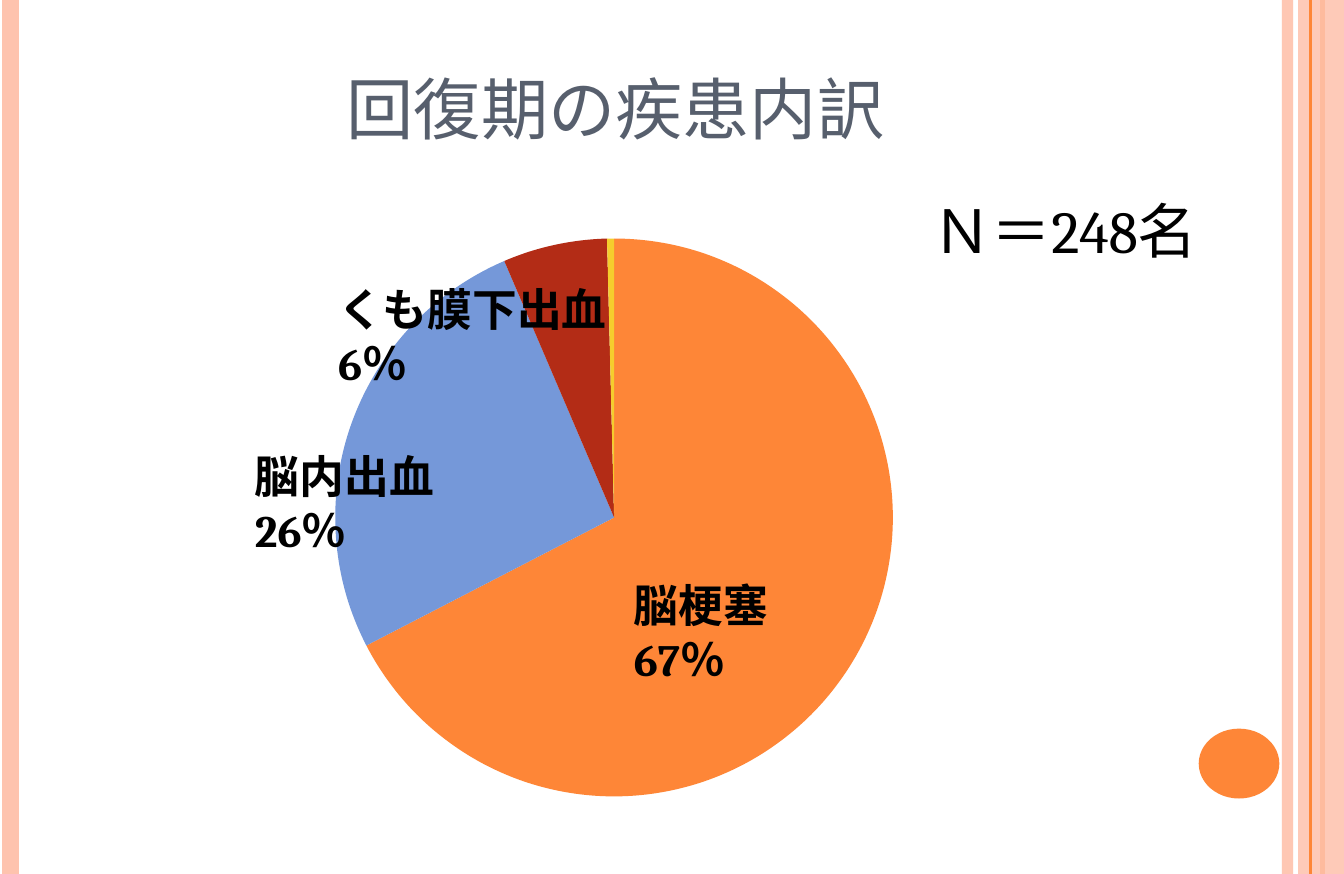
"""Build the slide on the disease breakdown of recovery-phase patients."""
from lxml.etree import SubElement
from pptx import Presentation
from pptx.chart.data import CategoryChartData
from pptx.dml.color import RGBColor
from pptx.enum.chart import XL_CHART_TYPE as CHART
from pptx.enum.shapes import MSO_CONNECTOR as LINE, MSO_SHAPE as SHAPE
from pptx.enum.text import MSO_ANCHOR as ANCHOR, PP_ALIGN as ALIGN
from pptx.oxml.ns import qn
from pptx.util import Inches, Pt

ORANGE, PEACH, BLACK = "FE8637", "FEC3AE", "000000"
FONT = "Cambria"

deck = Presentation()
deck.slide_width, deck.slide_height = Inches(5), Inches(3.25)
COL, ROW = deck.slide_width / 100, deck.slide_height / 65


def grid(left, top, width, height):
    return [int(n * unit) for n, unit in zip((left, top, width, height), (COL, ROW) * 2)]


def paint(colour_format, hex_colour, opacity=100):
    colour_format.rgb = RGBColor.from_string(hex_colour)
    if opacity < 100:
        parent = colour_format._xFill if hasattr(colour_format, "_xFill") else None
        if parent is not None:
            SubElement(parent.find(qn("a:srgbClr")), qn("a:alpha"), val=str(opacity * 1000))


slide = deck.slides.add_slide(deck.slide_layouts[5])

stripes = [(95.8, PEACH, 3, 93), (0.8, PEACH, 4.5, 100), (98.4, ORANGE, 1.5, 100),
           (97.5, ORANGE, 0.75, 100)]
bands = [(SHAPE.RECTANGLE, (96.6, 0, 3.4, 65), PEACH, 87),
         (SHAPE.OVAL, (89.2, 54.2, 6, 5.2), ORANGE, 100)]

for column, hue, weight, opacity in stripes[:3]:
    x = int(column * COL)
    stripe = slide.shapes.add_connector(LINE.STRAIGHT, x, 0, x, deck.slide_height)
    stripe.line.width = Pt(weight)
    stripe.line.fill.solid()
    paint(stripe.line.fill.fore_color, hue, opacity)
    SubElement(stripe._element.spPr, qn("a:effectLst"))

for kind, area, hue, opacity in bands:
    band = slide.shapes.add_shape(kind, *grid(*area))
    band.shadow.inherit = False
    band.fill.solid()
    paint(band.fill.fore_color, hue, opacity)
    band.line.fill.background()

for column, hue, weight, opacity in stripes[3:]:
    x = int(column * COL)
    stripe = slide.shapes.add_connector(LINE.STRAIGHT, x, 0, x, deck.slide_height)
    stripe.line.width = Pt(weight)
    paint(stripe.line.color, hue)
    SubElement(stripe._element.spPr, qn("a:effectLst"))

heading = slide.shapes.title
heading.left, heading.top, heading.width, heading.height = grid(5, 2.6, 81.6, 10.8)
frame = heading.text_frame
frame.text = "回復期の疾患内訳"
margins = {"margin_left": Inches(0.05), "margin_right": Inches(0.05),
           "margin_top": Inches(0.02), "margin_bottom": Inches(0.02),
           "vertical_anchor": ANCHOR.MIDDLE}
for name, value in margins.items():
    setattr(frame, name, value)
frame.paragraphs[0].alignment = ALIGN.CENTER
wording = frame.paragraphs[0].runs[0].font
wording.name, wording.size = FONT, Pt(18)
paint(wording.color, "575F6D")

diseases = CategoryChartData()
diseases.categories = ["1", "2", "3", "4"]
diseases.add_series("Series 1", (67, 26, 6, 0.4))
pie = slide.shapes.add_chart(CHART.PIE, *grid(4.2, 14.8, 83, 47.4), diseases).chart
pie.has_legend = pie.has_title = False
pie.font.name, pie.font.size = FONT, Pt(10)
paint(pie.font.color, BLACK)
plot = pie.plots[0]
plot.vary_by_categories = True
for index, hue in enumerate((ORANGE, "7598D9", "B32C16", "F5CD2D")):
    wedge = plot.series[0].points[index].format
    wedge.fill.solid()
    paint(wedge.fill.fore_color, hue)
    wedge.line.fill.background()

area = pie._chartSpace.chart.plotArea
layout = area.find(qn("c:layout"))
if layout is None:
    layout = SubElement(area, qn("c:layout"))
    area.insert(0, layout)
manual = SubElement(layout, qn("c:manualLayout"))
settings = {"layoutTarget": "inner", "xMode": "edge", "yMode": "edge",
            "x": "0.25", "y": "0.06", "w": "0.5", "h": "0.88"}
for name, value in settings.items():
    SubElement(manual, qn(f"c:{name}"), val=value)

labels = [("Ｎ＝248名", (67.4, 13.4, 24.2, 7.4), 16, False),
          ("脳梗塞　67％", (45.2, 42, 23.6, 6), 12, True),
          ("脳内出血　26％", (17, 32.4, 27, 6), 12, True),
          ("くも膜下出血　6％", (23.2, 20, 29.8, 6), 12, True)]
for text, place, size, bold in labels:
    label = slide.shapes.add_textbox(*grid(*place)).text_frame
    label.word_wrap = True
    label.text = text
    wording = label.paragraphs[0].runs[0].font
    for name, value in {"name": FONT, "size": Pt(size), "bold": bold}.items():
        setattr(wording, name, value)
    paint(wording.color, BLACK)

deck.save("out.pptx")
